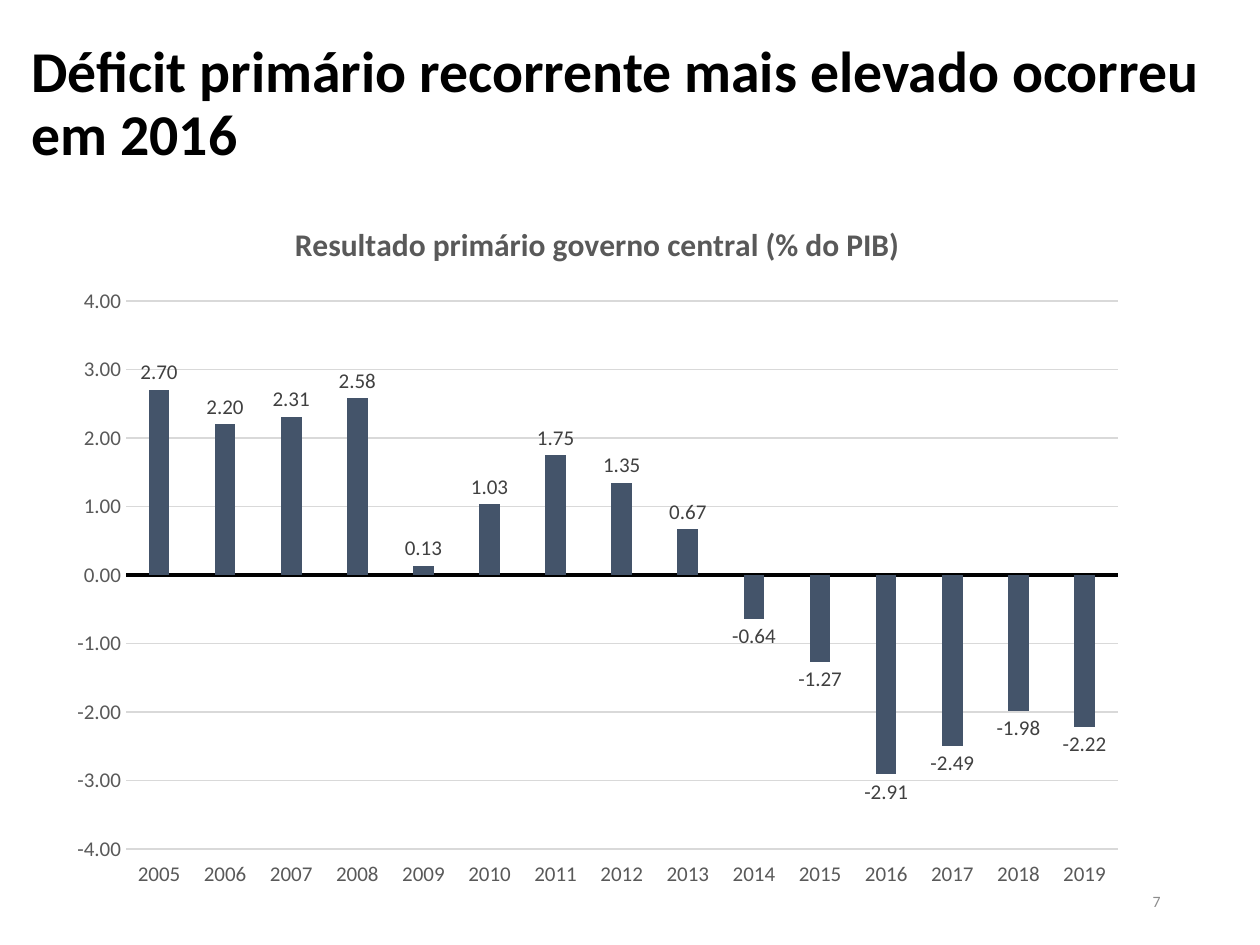
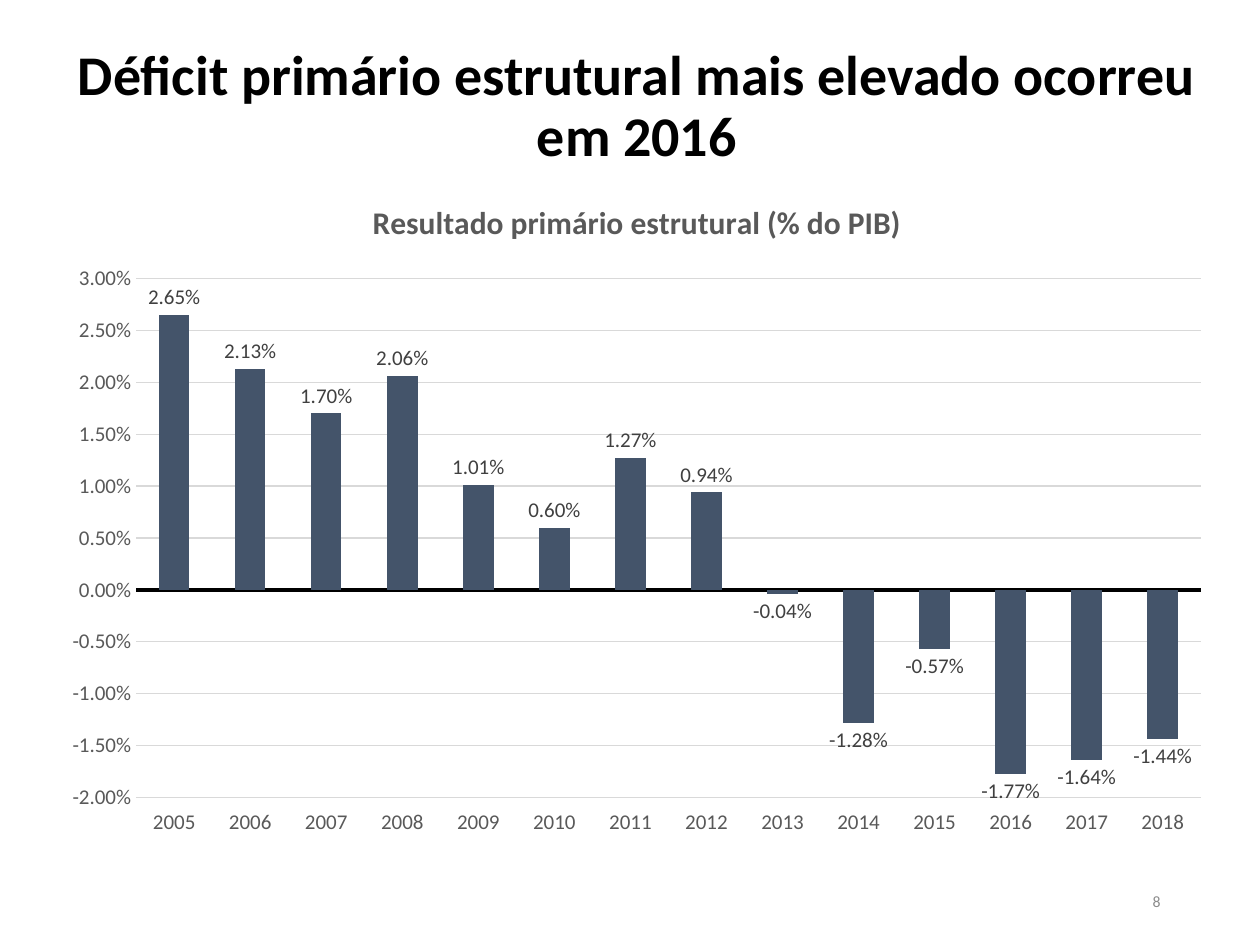
from pptx import Presentation
from pptx.chart.data import CategoryChartData
from pptx.dml.color import RGBColor
from pptx.enum import chart as charts, text
from pptx.oxml import parse_xml
from pptx.oxml.ns import nsdecls, qn
from pptx.util import Inches, Pt

FONT = "Calibri"
BLACK, SLATE, GRAY = "000000", "44546A", "595959"
LABEL_GRAY, GRID_GRAY, NUMBER_GRAY = "404040", "D9D9D9", "8C8C8C"
FIRST_YEAR = 2005


def color(value):
    return RGBColor.from_string(value)


def set_all(target, values):
    for name, value in values.items():
        setattr(target, name, value)


def set_font(font, size, hex_color, bold=False):
    set_all(font, {"name": FONT, "size": Pt(size), "bold": bold})
    font.color.rgb = color(hex_color)


def set_line(line, hex_color, width):
    line.color.rgb = color(hex_color)
    line.width = Pt(width)


class Deck:
    def __init__(self):
        self.presentation = Presentation()
        self.presentation.slide_width = Inches(10)
        self.presentation.slide_height = Inches(7.5)
        self.slide = None

    def new_slide(self):
        layout = self.presentation.slide_layouts.get_by_name("Title Only")
        self.slide = self.presentation.slides.add_slide(layout)

    def fill_text(self, shape, words, size, hex_color, alignment, bold=False):
        frame = shape.text_frame
        set_all(frame, {"word_wrap": True, "auto_size": text.MSO_AUTO_SIZE.NONE,
                        "vertical_anchor": text.MSO_ANCHOR.MIDDLE})
        paragraph = frame.paragraphs[0]
        paragraph.alignment = alignment
        run = paragraph.add_run()
        run.text = words
        set_font(run.font, size, hex_color, bold)
        return paragraph

    def title(self, words, box, size, alignment):
        shape = self.slide.shapes.title
        set_all(shape, dict(zip(("left", "top", "width", "height"), map(Inches, box))))
        paragraph = self.fill_text(shape, words, size, BLACK, alignment, bold=True)
        paragraph.line_spacing = 0.9

    def page_number(self, number):
        box = self.slide.shapes.add_textbox(*map(Inches, (7.06, 6.95, 2.25, 0.4)))
        self.fill_text(box, str(number), 9, NUMBER_GRAY, text.PP_ALIGN.RIGHT)

    def column_chart(self, title, values, box, plot_box, number_format, scale, gap, overlap):
        data = CategoryChartData(number_format=number_format)
        data.categories = [str(FIRST_YEAR + i) for i in range(len(values))]
        data.add_series(title, values)
        frame = self.slide.shapes.add_chart(
            charts.XL_CHART_TYPE.COLUMN_CLUSTERED, *map(Inches, box), data)
        chart = frame.chart
        set_font(chart.font, 10, BLACK)
        chart.has_legend = False
        heading = chart.chart_title.text_frame
        heading.text = title
        set_font(heading.paragraphs[0].runs[0].font, 18, GRAY, bold=True)
        self.place_plot(chart, box, plot_box)
        self.style_columns(chart.plots[0], number_format, gap, overlap)
        self.style_axes(chart, number_format, scale)

    def place_plot(self, chart, box, plot_box):
        """Fix the inner plot area, given in slide inches, inside the chart."""
        left, top, width, height = box
        x, y, w, h = plot_box
        shares = {"x": (x - left) / width, "y": (y - top) / height,
                  "w": w / width, "h": h / height}
        edges = "".join(f'<c:{k}Mode val="edge"/>' for k in "xy")
        sizes = "".join(f'<c:{k} val="{v:.4f}"/>' for k, v in shares.items())
        layout = parse_xml(
            f'<c:layout {nsdecls("c")}><c:manualLayout><c:layoutTarget val="inner"/>'
            f'{edges}{sizes}</c:manualLayout></c:layout>')
        plot_area = chart.element.find(".//" + qn("c:plotArea"))
        for old in plot_area.findall(qn("c:layout")):
            plot_area.remove(old)
        plot_area.insert(0, layout)

    def style_columns(self, plot, number_format, gap, overlap):
        set_all(plot, {"gap_width": gap, "overlap": overlap,
                       "vary_by_categories": False, "has_data_labels": True})
        set_all(plot.data_labels, {
            "show_value": True, "number_format": number_format,
            "number_format_is_linked": False,
            "position": charts.XL_LABEL_POSITION.OUTSIDE_END})
        set_font(plot.data_labels.font, 12, LABEL_GRAY)
        series = plot.series[0]
        series.invert_if_negative = False
        series.format.fill.solid()
        series.format.fill.fore_color.rgb = color(SLATE)

    def style_axes(self, chart, number_format, scale):
        category_axis, value_axis = chart.category_axis, chart.value_axis
        for axis in (category_axis, value_axis):
            set_all(axis, {"major_tick_mark": charts.XL_TICK_MARK.NONE,
                           "minor_tick_mark": charts.XL_TICK_MARK.NONE})
            set_font(axis.tick_labels.font, 12, GRAY)
        category_axis.tick_label_position = charts.XL_TICK_LABEL_POSITION.LOW
        set_line(category_axis.format.line, BLACK, 2)
        value_axis.format.line.fill.background()
        names = ("minimum_scale", "maximum_scale", "major_unit")
        set_all(value_axis, dict(zip(names, scale)))
        set_all(value_axis.tick_labels, {"number_format": number_format,
                                         "number_format_is_linked": False})
        value_axis.has_major_gridlines = True
        set_line(value_axis.major_gridlines.format.line, GRID_GRAY, 0.75)


SLIDES = [
    {"title": ("Déficit primário recorrente mais elevado ocorreu em 2016",
               (0.15, 0.11, 9.7, 1.45), 33, text.PP_ALIGN.LEFT),
     "chart": {"title": "Resultado primário governo central (% do PIB)",
               "values": (2.70, 2.20, 2.31, 2.58, 0.13, 1.03, 1.75, 1.35, 0.67,
                          -0.64, -1.27, -2.91, -2.49, -1.98, -2.22),
               "box": (0.44, 1.56, 8.6, 5.59), "plot_box": (1, 2.39, 7.87, 4.35),
               "number_format": "0.00", "scale": (-4, 4, 1),
               "gap": 219, "overlap": -27}},
    {"title": ("Déficit primário estrutural mais elevado ocorreu em 2016",
               (0.39, 0.32, 9.33, 1.07), 32, text.PP_ALIGN.CENTER),
     "chart": {"title": "Resultado primário estrutural (% do PIB)",
               "values": (0.0265, 0.0213, 0.0170, 0.0206, 0.0101, 0.0060, 0.0127,
                          0.0094, -0.0004, -0.0128, -0.0057, -0.0177, -0.0164, -0.0144),
               "box": (0.39, 1.39, 9.33, 5.34), "plot_box": (1.08, 2.21, 8.45, 4.12),
               "number_format": "0.00%", "scale": (-0.02, 0.03, 0.005),
               "gap": 150, "overlap": 0}},
]


def main():
    deck = Deck()
    for number, content in enumerate(SLIDES, start=7):
        deck.new_slide()
        deck.title(*content["title"])
        deck.column_chart(**content["chart"])
        deck.page_number(number)
    deck.presentation.save("out.pptx")


if __name__ == "__main__":
    main()
